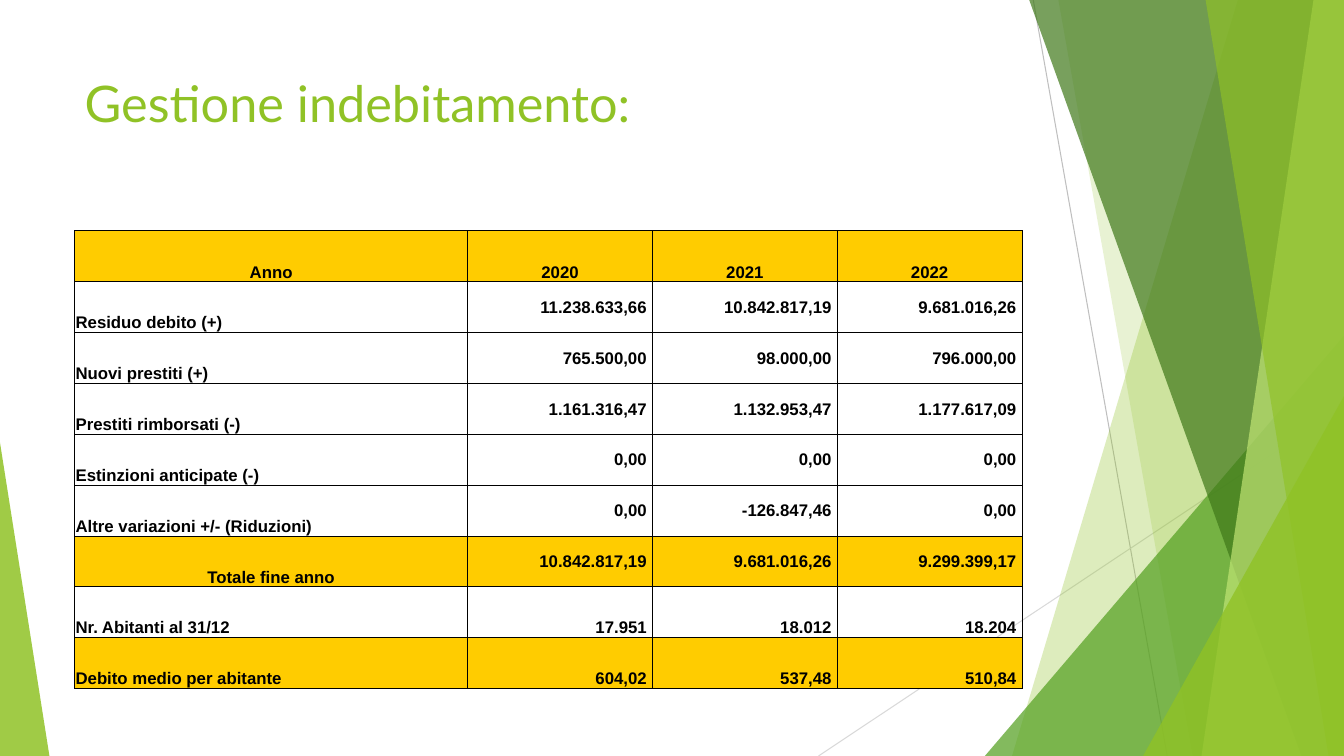
from lxml import etree
from pptx import Presentation
from pptx import util as u
from pptx.dml.color import RGBColor
from pptx.enum import shapes, text
from pptx.oxml import ns

LIME, GREEN, DARK, PALE = "90C226", "54A021", "3F7819", "C0E474"
BLACK, YELLOW = "000000", "FFCC00"
LEFT, CENTER, RIGHT = text.PP_ALIGN.LEFT, text.PP_ALIGN.CENTER, text.PP_ALIGN.RIGHT
TOP, MIDDLE, BOTTOM = text.MSO_ANCHOR.TOP, text.MSO_ANCHOR.MIDDLE, text.MSO_ANCHOR.BOTTOM

RAYS = [
    ((76.88, 0), (86.85, 100), "BFBFBF"),
    ((100, 53.73), (60.9, 100), "D9D9D9"),
]
FACETS = [
    ("band", 92.1, 75.3, LIME, 30),
    ("band", 78.75, 88.73, LIME, 20),
    ("triangle", (73.28, 44.4, 26.72, 55.6), 1, GREEN, 72),
    ("band", 76.58, 96.83, DARK, 70),
    ("band", 97.73, 89.4, PALE, 70),
    ("band", 89.7, 98.85, LIME, 65),
    ("triangle", (85.05, 52.4, 14.95, 47.6), 1, LIME, 80),
    ("triangle", (0, 58.53, 3.68, 41.47), 0, LIME, 85),
]
DEBT = [
    (("Anno", "2020", "2021", "2022"), YELLOW, CENTER, CENTER, BOTTOM),
    (("Residuo debito (+)", "11.238.633,66 ", "10.842.817,19 ", "9.681.016,26 "),
     None, LEFT, RIGHT, MIDDLE),
    (("Nuovi prestiti (+)", "765.500,00 ", "98.000,00 ", "796.000,00 "),
     None, LEFT, RIGHT, MIDDLE),
    (("Prestiti rimborsati (-)", "1.161.316,47 ", "1.132.953,47 ", "1.177.617,09 "),
     None, LEFT, RIGHT, MIDDLE),
    (("Estinzioni anticipate (-)", "0,00 ", "0,00 ", "0,00 "),
     None, LEFT, RIGHT, MIDDLE),
    (("Altre variazioni +/- (Riduzioni)", "0,00 ", "-126.847,46 ", "0,00 "),
     None, LEFT, RIGHT, MIDDLE),
    (("Totale fine anno", "10.842.817,19 ", "9.681.016,26 ", "9.299.399,17 "),
     YELLOW, CENTER, RIGHT, MIDDLE),
    (("Nr. Abitanti al 31/12", "17.951 ", "18.012 ", "18.204 "),
     None, LEFT, RIGHT, BOTTOM),
    (("Debito medio per abitante", "604,02 ", "537,48 ", "510,84 "),
     YELLOW, LEFT, RIGHT, BOTTOM),
]


def rgb(value):
    return RGBColor.from_string(value)


class Deck:
    """Slide builder whose lengths are percentages of the slide's width and height."""

    def __init__(self, width, height):
        self.prs = Presentation()
        self.prs.slide_width, self.prs.slide_height = u.Inches(width), u.Inches(height)
        self.s = None

    def x(self, share):
        return round(self.prs.slide_width * share / 100)

    def y(self, share):
        return round(self.prs.slide_height * share / 100)

    def box(self, left, top, width, height):
        return self.x(left), self.y(top), self.x(width), self.y(height)

    def new_slide(self):
        self.s = self.prs.slides.add_slide(self.prs.slide_layouts[5])

    def add_words(self, p, words, font, size, colour, align, bold=False):
        p.alignment = align
        r = p.add_run()
        r.text = words
        r.font.name, r.font.size, r.font.bold = font, u.Pt(size), bold
        r.font.color.rgb = rgb(colour)

    def title(self, area, words):
        sp = self.s.shapes.title
        sp.left, sp.top, sp.width, sp.height = self.box(*area)
        tf = sp.text_frame
        tf.word_wrap, tf.vertical_anchor = True, TOP
        self.add_words(tf.paragraphs[0], words, "Lato", 36, LIME, LEFT)

    def line(self, start, end, colour):
        sp = self.s.shapes.add_connector(
            shapes.MSO_CONNECTOR.STRAIGHT, self.x(start[0]), self.y(start[1]),
            self.x(end[0]), self.y(end[1]))
        sp.line.color.rgb, sp.line.width = rgb(colour), u.Pt(0.75)
        etree.SubElement(sp._element.spPr, ns.qn("a:effectLst"))

    def paint(self, sp, colour, opacity):
        sp.shadow.inherit = False
        sp.line.fill.background()
        sp.fill.solid()
        sp.fill.fore_color.rgb = rgb(colour)
        swatch = sp._element.spPr.find(".//" + ns.qn("a:srgbClr"))
        etree.SubElement(swatch, ns.qn("a:alpha"), val=str(opacity * 1000))

    def band(self, top_x, bottom_x, colour, opacity):
        corners = [(100, 0), (100, 100), (bottom_x, 100)]
        outline = self.s.shapes.build_freeform(self.x(top_x), 0)
        outline.add_line_segments([(self.x(a), self.y(b)) for a, b in corners])
        self.paint(outline.convert_to_shape(), colour, opacity)

    def triangle(self, area, apex, colour, opacity):
        sp = self.s.shapes.add_shape(
            shapes.MSO_SHAPE.ISOSCELES_TRIANGLE, *self.box(*area))
        sp.adjustments[0] = apex
        self.paint(sp, colour, opacity)

    def borders(self, cell):
        props = cell._tc.get_or_add_tcPr()
        for i, side in enumerate("LRTB"):
            ln = etree.Element(ns.qn("a:ln" + side), w=str(u.Pt(0.5)))
            fill = etree.SubElement(ln, ns.qn("a:solidFill"))
            etree.SubElement(fill, ns.qn("a:srgbClr"), val=BLACK)
            props.insert(i, ln)

    def cell(self, cell, words, fill, align, anchor):
        cell.margin_left = cell.margin_top = cell.margin_right = u.Inches(0.01)
        cell.margin_bottom = 0
        cell.vertical_anchor = anchor
        if fill:
            cell.fill.solid()
            cell.fill.fore_color.rgb = rgb(fill)
        else:
            cell.fill.background()
        self.borders(cell)
        self.add_words(cell.text_frame.paragraphs[0], words, "Arial", 12, BLACK, align, True)

    def table(self, area, widths, rows):
        table = self.s.shapes.add_table(len(rows), len(widths), *self.box(*area)).table
        table.first_row = table.horz_banding = False
        for column, width in zip(table.columns, widths):
            column.width = self.x(width)
        for row, (words, fill, label_align, value_align, anchor) in zip(table.rows, rows):
            row.height = self.y(area[3] / len(rows))
            for i, (cell, word) in enumerate(zip(row.cells, words)):
                if i == 0:
                    self.cell(cell, word, fill, label_align, BOTTOM)
                else:
                    self.cell(cell, word, fill, value_align, anchor)


def main():
    deck = Deck(13.33, 7.5)
    deck.new_slide()
    for ray in RAYS:
        deck.line(*ray)
    for kind, *facet in FACETS:
        draw = deck.band if kind == "band" else deck.triangle
        draw(*facet)
    deck.title((5.55, 8.93, 70.5, 19.2), "Gestione indebitamento:")
    deck.table((5.55, 30.53, 70.5, 60.53), [29.25] + [13.75] * 3, DEBT)
    deck.prs.save("out.pptx")


if __name__ == "__main__":
    main()
